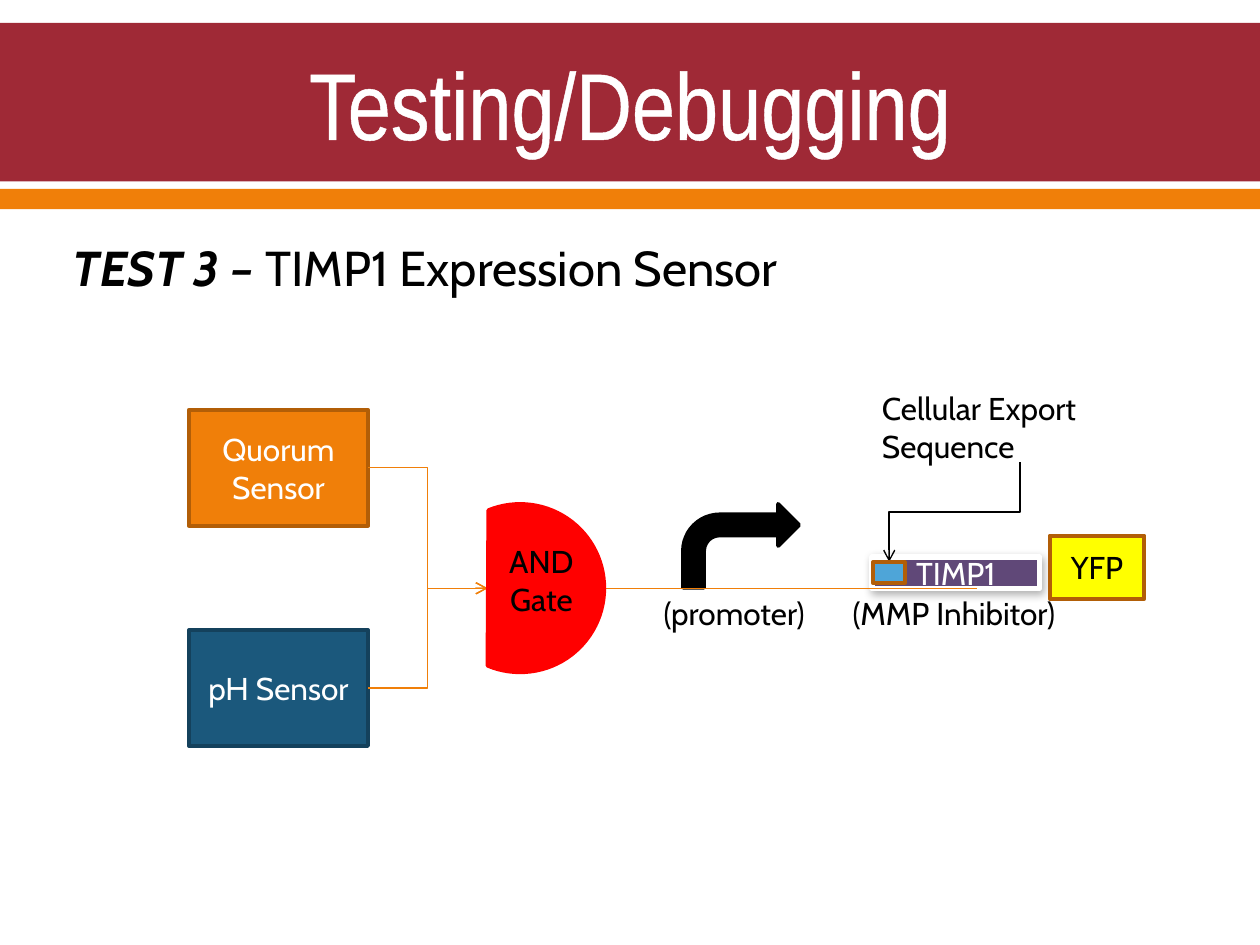
from lxml.etree import SubElement
from pptx import Presentation
from pptx.dml.color import RGBColor
from pptx.enum.shapes import MSO_CONNECTOR as Connector, MSO_SHAPE as Shape
from pptx.enum.text import MSO_ANCHOR as Anchor, MSO_AUTO_SIZE as AutoSize, PP_ALIGN as Align
from pptx.oxml import parse_xml
from pptx.oxml.ns import nsdecls, qn
from pptx.util import Cm, Pt

WHITE, BLACK = "FFFFFF", "000000"
ORANGE, DARK_ORANGE, RED = "F07F09", "B25E07", "FF0000"
WIRE_Y = 11.86
GATE_LEFT = 9.83


def color(value):
    return RGBColor.from_string(value)


def lengths(values):
    return [Cm(value) for value in values]


def add_run(paragraph, text, size, ink, font="Cabin", emphasis=False):
    run = paragraph.add_run()
    run.text = text
    run.font.name = font
    run.font.size = Pt(size)
    run.font.color.rgb = color(ink)
    run.font.bold = run.font.italic = emphasis
    return run


def add_label(slide, box, lines, align=Align.LEFT):
    """Add a text box; each line is a list of run argument tuples."""
    shape = slide.shapes.add_textbox(*lengths(box))
    frame = shape.text_frame
    frame.word_wrap = True
    frame.auto_size = AutoSize.SHAPE_TO_FIT_TEXT
    for index, runs in enumerate(lines):
        paragraph = frame.add_paragraph() if index else frame.paragraphs[0]
        paragraph.alignment = align
        for run in runs:
            add_run(paragraph, *run)


def add_block(slide, box, fill, line=None, text="", ink=WHITE, kind=Shape.RECTANGLE, width=2.25):
    shape = slide.shapes.add_shape(kind, *lengths(box))
    shape.shadow.inherit = False
    shape.fill.solid()
    shape.fill.fore_color.rgb = color(fill)
    if line:
        shape.line.color.rgb = color(line)
        shape.line.width = Pt(width)
    else:
        shape.line.fill.background()
    if text:
        frame = shape.text_frame
        frame.word_wrap = True
        frame.vertical_anchor = Anchor.MIDDLE
        frame.paragraphs[0].alignment = Align.CENTER
        add_run(frame.paragraphs[0], text, 18, ink)
    return shape


def add_wire(slide, ends, ink=ORANGE, kind=Connector.STRAIGHT, arrow=False):
    wire = slide.shapes.add_connector(kind, *lengths(ends))
    wire.line.color.rgb = color(ink)
    wire.line.width = Pt(0.8)
    properties = wire._element.spPr
    if arrow:
        SubElement(properties.find(qn("a:ln")), qn("a:tailEnd"), type="arrow")
    SubElement(properties, qn("a:effectLst"))
    return wire


def add_soft_shadow(shape):
    effects = shape._element.spPr.find(qn("a:effectLst"))
    effects.append(parse_xml(
        f'<a:outerShdw {nsdecls("a")} blurRad="{Pt(5)}" dist="{Pt(2)}" dir="3600000">'
        '<a:srgbClr val="000000"><a:alpha val="30000"/></a:srgbClr></a:outerShdw>'))


def add_header(slide):
    add_block(slide, (0, 0.46, 25.4, 3.2), "9F2936")
    add_block(slide, (0, 3.81, 25.4, 0.41), ORANGE)
    title = slide.shapes.add_textbox(*lengths((1.27, 0.51, 22.86, 3.1)))
    frame = title.text_frame
    frame.word_wrap = True
    frame.vertical_anchor = Anchor.MIDDLE
    frame.paragraphs[0].alignment = Align.CENTER
    run = add_run(frame.paragraphs[0], "Testing/Debugging", 54, WHITE, "Arial Narrow")
    run.font._element.insert(0, parse_xml(
        f'<a:ln {nsdecls("a")} w="{Pt(1.1)}"><a:solidFill>'
        f'<a:srgbClr val="{WHITE}"/></a:solidFill></a:ln>'))
    add_label(slide, (1.22, 4.67, 15.49, 1.45),
              [[("TEST 3 – ", 28, BLACK, "Cabin", True), ("TIMP1 Expression Sensor", 28, BLACK)]])


def add_circuit(slide):
    add_label(slide, (17.53, 7.72, 5.97, 1.8), [[("Cellular Export Sequence", 18, BLACK)]])
    sensors = [("Quorum Sensor", 8.26, ORANGE, DARK_ORANGE), ("pH Sensor", 12.7, "1B587C", "14415C")]
    for text, top, fill, line in sensors:
        add_block(slide, (3.81, top, 3.61, 2.34), fill, line, text)

    gene = add_block(slide, (17.58, 11.23, 3.38, 0.64), "604878", WHITE, "TIMP1", width=3)
    add_soft_shadow(gene)
    add_block(slide, (13.77, 10.16, 2.34, 1.69), BLACK, BLACK, kind=Shape.BENT_ARROW)

    for _, top, _, _ in sensors:
        add_wire(slide, (7.42, top + 1.17, GATE_LEFT, WIRE_Y), kind=Connector.ELBOW, arrow=True)
    for start, end in ((13.97, 19.69), (GATE_LEFT, 13.97)):
        add_wire(slide, (start, WIRE_Y, end, WIRE_Y))

    gate = add_block(slide, (8.79, 10.16, 3.39, 3.39), RED, RED, kind=Shape.CHORD)
    gate.rotation = 202.8
    add_label(slide, (9.96, 10.8, 1.91, 1.8),
              [[(word, 18, BLACK)] for word in ("AND", "Gate")], Align.CENTER)
    add_block(slide, (21.16, 10.8, 1.91, 1.27), "FFFF00", DARK_ORANGE, "YFP", BLACK)

    export = add_wire(slide, (18.24, 9, 20.25, 11.64), BLACK, Connector.ELBOW, True)
    export._element.spPr.find(qn("a:xfrm")).set("rot", "5400000")
    add_block(slide, (17.6, 11.33, 0.64, 0.43), "4EA5D8", DARK_ORANGE)

    for text, left, width in (("(promoter)", 13.13, 3.71), ("(MMP Inhibitor)", 16.94, 5.72)):
        add_label(slide, (left, WIRE_Y, width, 1.02), [[(text, 18, BLACK)]])


def main():
    presentation = Presentation()
    presentation.slide_width, presentation.slide_height = Cm(25.4), Cm(19.05)
    slide = presentation.slides.add_slide(presentation.slide_layouts[6])
    add_header(slide)
    add_circuit(slide)
    presentation.save("out.pptx")


if __name__ == "__main__":
    main()
